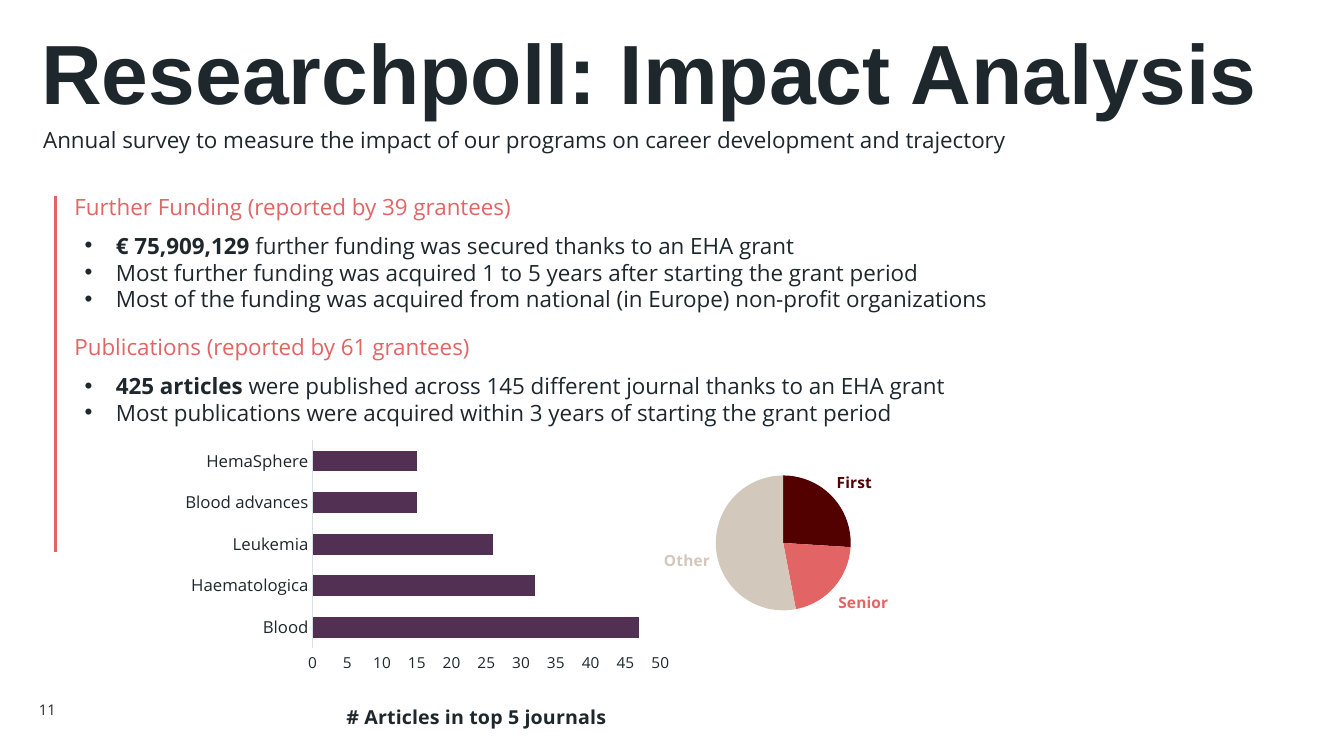
from lxml.etree import SubElement
from pptx import Presentation
from pptx.chart.data import CategoryChartData
from pptx.dml.color import RGBColor
from pptx.enum.chart import XL_CHART_TYPE, XL_LABEL_POSITION, XL_TICK_MARK
from pptx.enum.shapes import MSO_CONNECTOR
from pptx.enum.text import MSO_ANCHOR, MSO_AUTO_SIZE, PP_ALIGN
from pptx.oxml.ns import qn
from pptx.util import Inches, Pt

INK, CORAL, PLUM, MAROON, SAND, RULE = (
    "1E272C", "E26465", "523054", "520000", "D3C8BC", "D8E0E4")
BODY_FONT = "Open Sans"

FUNDING = [
    ("€ 75,909,129", " further funding was secured thanks to an EHA grant"),
    ("", "Most further funding was acquired 1 to 5 years after starting the grant period"),
    ("", "Most of the funding was acquired from national (in Europe) non-profit organizations"),
]
PUBLICATIONS = [
    ("425 articles ", "were published across 145 different journal thanks to an EHA grant"),
    ("", "Most publications were acquired within 3 years of starting the grant period"),
]
JOURNALS = {"Blood": 47, "Haematologica": 32, "Leukemia": 26,
            "Blood advances": 15, "HemaSphere": 15}
AUTHORSHIP = {"First": (26, MAROON), "Senior": (21, CORAL), "Other": (53, SAND)}


def rgb(color):
    return RGBColor.from_string(color)


def set_font(font, size, color=INK, bold=False, name=BODY_FONT):
    font.name, font.size, font.bold = name, Pt(size), bold
    font.color.rgb = rgb(color)


def place(shape, box):
    shape.left, shape.top, shape.width, shape.height = map(Inches, box)


def add_label(page, box, text, size=16, color=INK, align=PP_ALIGN.LEFT):
    frame = page.shapes.add_textbox(*map(Inches, box)).text_frame
    frame.word_wrap = True
    frame.vertical_anchor = MSO_ANCHOR.MIDDLE
    para = frame.paragraphs[0]
    para.text, para.alignment = text, align
    set_font(para.font, size, color)


def fill_title(title, box, text):
    place(title, box)
    frame = title.text_frame
    frame.auto_size = MSO_AUTO_SIZE.NONE
    frame.vertical_anchor = MSO_ANCHOR.BOTTOM
    frame.margin_left, frame.margin_bottom = Inches(0.08), 0
    para = frame.paragraphs[0]
    para.text, para.alignment, para.line_spacing = text, PP_ALIGN.LEFT, 0.85
    set_font(para.font, 60, bold=True, name="Arial")


def fill_bullets(body, box, items):
    place(body, box)
    frame = body.text_frame
    frame.auto_size = MSO_AUTO_SIZE.NONE
    frame.vertical_anchor = MSO_ANCHOR.TOP
    for index, (lead, rest) in enumerate(items):
        para = frame.add_paragraph() if index else frame.paragraphs[0]
        para.space_before = 0
        properties = para._p.get_or_add_pPr()
        properties.set("marL", str(Inches(0.31)))
        properties.set("indent", str(-Inches(0.31)))
        SubElement(properties, qn("a:buFont"), typeface="Arial")
        SubElement(properties, qn("a:buChar"), char="•")
        set_font(para.font, 16)
        if lead:
            span = para.add_run()
            span.text, span.font.bold = lead, True
        para.add_run().text = rest


def add_section(page, body, box, heading, items):
    """Coral heading with its bullet list underneath."""
    left, top, width, height = box
    add_label(page, (left, top, 12.4, 0.37), heading, color=CORAL)
    fill_bullets(body, (left + 0.1, top + 0.39, width, height - 0.39), items)


def add_rule(page, left, top, bottom):
    line = page.shapes.add_connector(
        MSO_CONNECTOR.STRAIGHT, Inches(left), Inches(top), Inches(left), Inches(bottom))
    line.line.color.rgb = rgb(CORAL)
    line.line.width = Pt(2.25)
    SubElement(line._element.spPr, qn("a:effectLst"))


def set_layout(parent, position, after=None, inner=False):
    """Fix a chart part's place, as fractions of the chart area."""
    for old in parent.findall(qn("c:layout")):
        parent.remove(old)
    layout = parent.makeelement(qn("c:layout"))
    manual = SubElement(layout, qn("c:manualLayout"))
    if inner:
        SubElement(manual, qn("c:layoutTarget"), val="inner")
    for axis in "xy":
        SubElement(manual, qn(f"c:{axis}Mode"), val="edge")
    for key, value in zip("xywh", position):
        SubElement(manual, qn(f"c:{key}"), val=str(value))
    if after is None:
        parent.insert(0, layout)
    else:
        after.addnext(layout)


def add_plain_chart(page, box, kind, values, plot_area):
    data = CategoryChartData()
    data.categories = list(values)
    data.add_series("Series 1", list(values.values()))
    chart = page.shapes.add_chart(kind, *map(Inches, box), data).chart
    chart.has_legend = chart.has_title = False
    set_font(chart.font, 10)
    set_layout(chart._chartSpace.chart.plotArea, plot_area, inner=True)
    return chart


def add_journal_bars(page, box):
    chart = add_plain_chart(page, box, XL_CHART_TYPE.BAR_CLUSTERED, JOURNALS,
                            (0.27, 0.02, 0.69, 0.7))
    plot = chart.plots[0]
    plot.gap_width, plot.vary_by_categories = 100, False
    fill = plot.series[0].format.fill
    fill.solid()
    fill.fore_color.rgb = rgb(PLUM)

    for axis, size in ((chart.category_axis, 12), (chart.value_axis, 11)):
        axis.major_tick_mark = axis.minor_tick_mark = XL_TICK_MARK.NONE
        axis.has_major_gridlines = False
        set_font(axis.tick_labels.font, size)
    chart.category_axis.format.line.color.rgb = rgb(RULE)
    chart.category_axis.format.line.width = Pt(0.75)

    values = chart.value_axis
    values.minimum_scale, values.maximum_scale, values.major_unit = 0, 50, 5
    values.format.line.fill.background()
    para = values.axis_title.text_frame.paragraphs[0]
    para.text = "# Articles in top 5 journals"
    set_font(para.font, 14, bold=True)
    title = values.axis_title._element
    set_layout(title, (0.33, 0.89), after=title.find(qn("c:tx")))


def add_authorship_pie(page, box):
    shares = {name: share for name, (share, _) in AUTHORSHIP.items()}
    chart = add_plain_chart(page, box, XL_CHART_TYPE.PIE, shares,
                            (0.32, 0.13, 0.4, 0.65))
    plot = chart.plots[0]
    plot.vary_by_categories = True
    for index, (_, color) in enumerate(AUTHORSHIP.values()):
        point = plot.series[0].points[index]
        point.format.fill.solid()
        point.format.fill.fore_color.rgb = rgb(color)
        set_font(point.data_label.font, 11, color, bold=True)
        point.data_label.position = XL_LABEL_POSITION.OUTSIDE_END
    for label in plot._element.iter(qn("c:dLbl")):
        label.find(qn("c:showVal")).set("val", "0")
        label.find(qn("c:showCatName")).set("val", "1")


def build_impact_page(deck):
    page = deck.slides.add_slide(deck.slide_layouts[3])
    title, funding, publications = list(page.placeholders)[:3]

    # Heading
    fill_title(title, (0.33, 0.3, 13, 0.91), "Researchpoll: Impact Analysis")
    add_label(page, (0.33, 1.2, 12.54, 0.37),
              "Annual survey to measure the impact of our programs "
              "on career development and trajectory")

    # Charts
    add_authorship_pie(page, (5.99, 4.45, 3.42, 2.06))
    add_journal_bars(page, (1.75, 4.31, 5, 3))

    # Findings
    add_rule(page, 0.55, 1.94, 5.48)
    add_section(page, funding, (0.64, 1.86, 10.06, 1.3),
                "Further Funding (reported by 39 grantees)", FUNDING)
    add_section(page, publications, (0.64, 3.25, 10.06, 1.03),
                "Publications (reported by 61 grantees)", PUBLICATIONS)

    # Page number
    add_label(page, (0, 6.84, 0.65, 0.4), "11", size=10.5, align=PP_ALIGN.RIGHT)


def main():
    deck = Presentation()
    deck.slide_width, deck.slide_height = Inches(13.33), Inches(7.5)
    build_impact_page(deck)
    deck.save("out.pptx")


if __name__ == "__main__":
    main()
